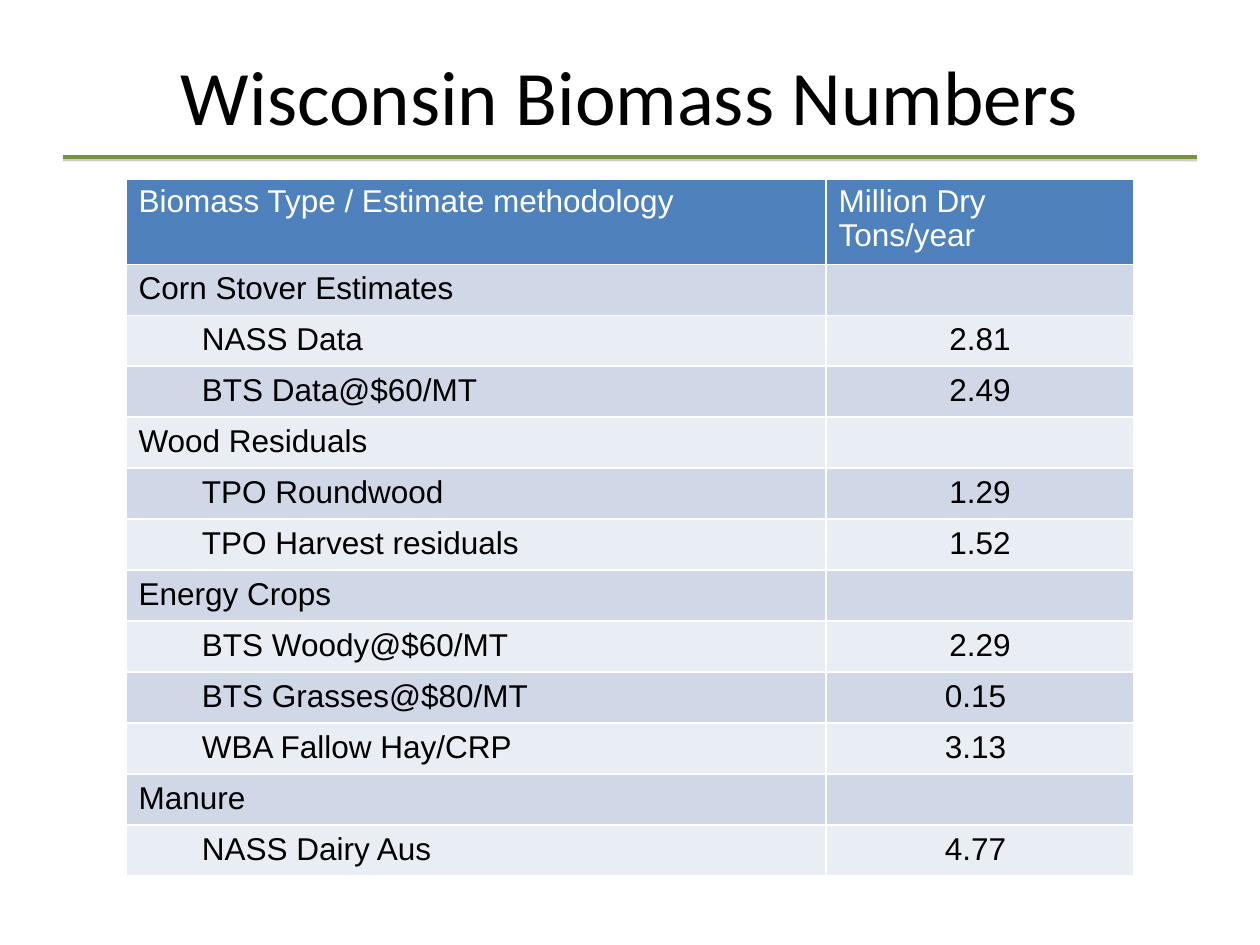
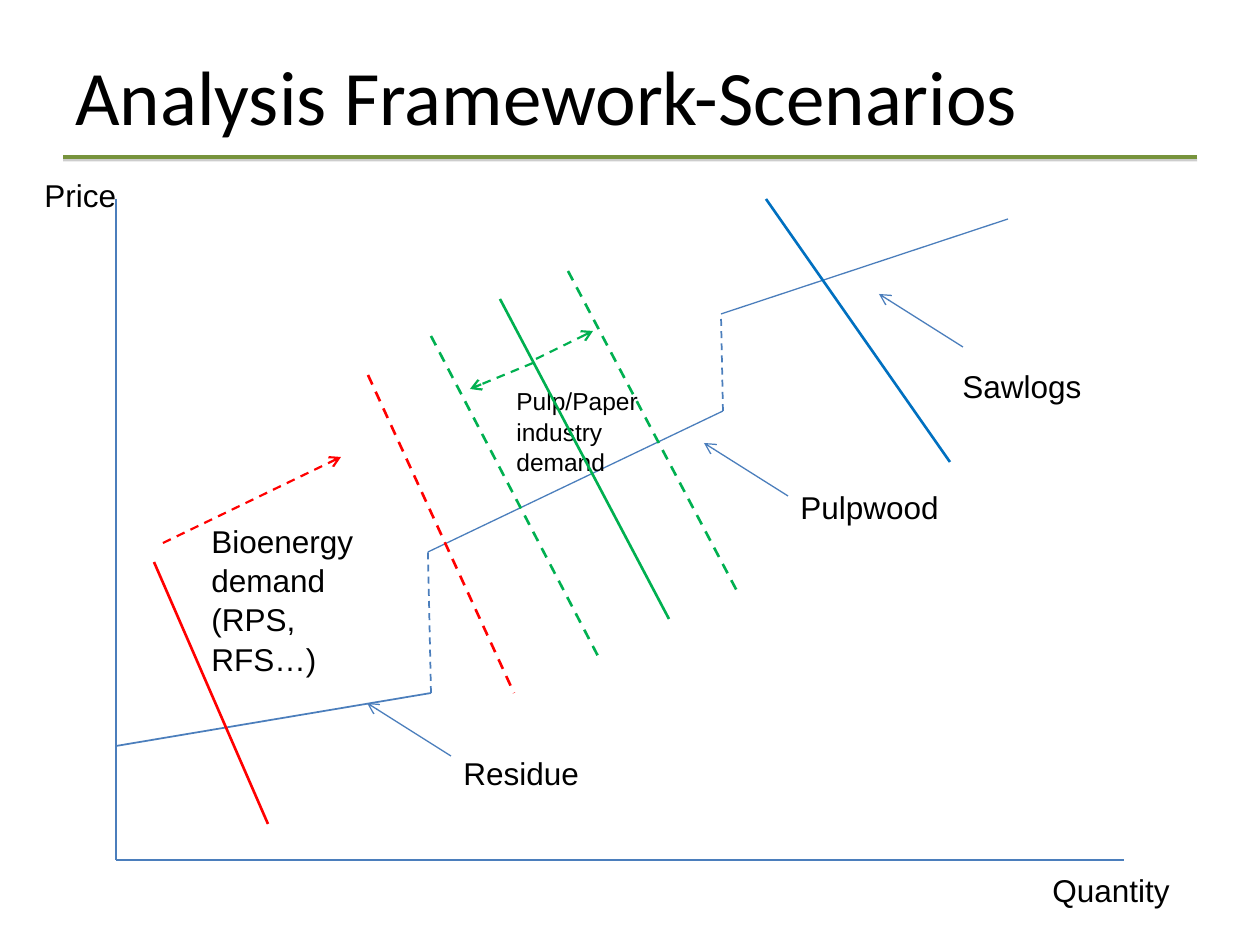
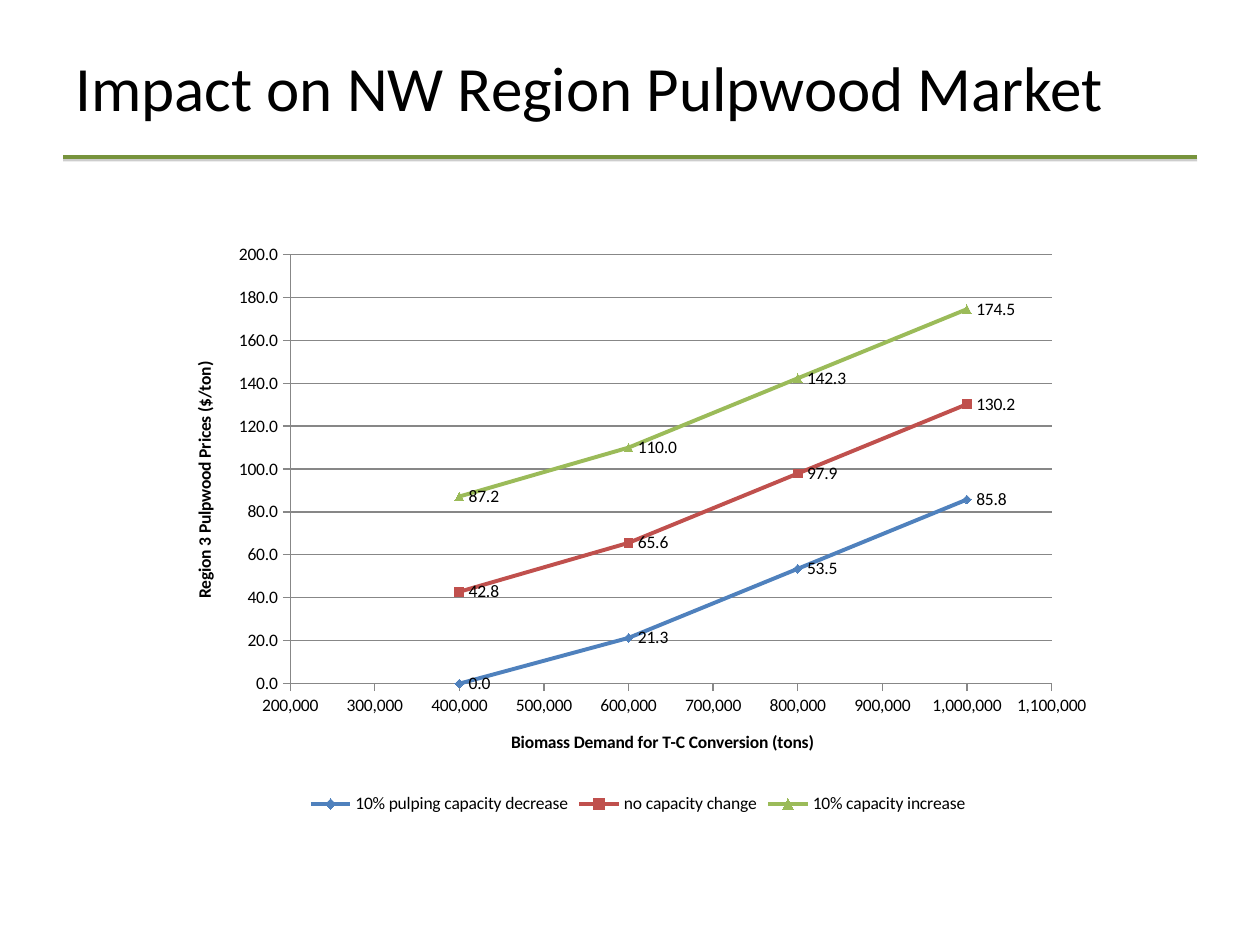
from itertools import pairwise

from pptx import Presentation
from pptx.chart.data import XyChartData
from pptx.chart.datalabel import DataLabels
from pptx.dml.color import RGBColor
from pptx.enum.chart import (XL_CHART_TYPE, XL_LABEL_POSITION, XL_LEGEND_POSITION,
                             XL_MARKER_STYLE, XL_TICK_MARK)
from pptx.enum.dml import MSO_LINE
from pptx.enum.shapes import MSO_CONNECTOR
from pptx.enum.text import MSO_ANCHOR, PP_ALIGN
from pptx.oxml import parse_xml
from pptx.oxml.ns import nsdecls, qn
from pptx.util import Pt

STRAIGHT = MSO_CONNECTOR.STRAIGHT
DASH = MSO_LINE.DASH
LEFT, CENTER = PP_ALIGN.LEFT, PP_ALIGN.CENTER
MARKERS = (XL_MARKER_STYLE.DIAMOND, XL_MARKER_STYLE.SQUARE, XL_MARKER_STYLE.TRIANGLE)

EMU_PER_PX = 914400 / 126
HEADING_FONT, BODY_FONT = "Calibri", "Arial"
BLACK, WHITE, GRAY = "000000", "FFFFFF", "878787"
RULE_GREEN, STEEL = "77933C", "4B7EBC"
RED, GREEN, BLUE = "FF0000", "00B050", "0070C0"
HEADER_FILL, BAND_FILLS = "4F81BD", ("D0D8E8", "E9EDF4")

BIOMASS_ROWS = [
    ("Corn Stover Estimates", ""),
    ("NASS Data", "2.81"),
    ("BTS Data@$60/MT", "2.49"),
    ("Wood Residuals", ""),
    ("TPO Roundwood", "1.29"),
    ("TPO Harvest residuals", "1.52"),
    ("Energy Crops", ""),
    ("BTS Woody@$60/MT", "2.29"),
    ("BTS Grasses@$80/MT", "0.15 "),
    ("WBA Fallow Hay/CRP", "3.13 "),
    ("Manure", ""),
    ("NASS Dairy Aus", "4.77 "),
]
DEMAND_LEVELS = (400000, 600000, 800000, 1000000)
PRICE_SERIES = [
    ("10% pulping capacity decrease", "4F81BD", (0, 21.3, 53.5, 85.8)),
    ("no capacity change", "C0504D", (42.8, 65.6, 97.9, 130.2)),
    ("10% capacity increase", "9BBB59", (87.2, 110.0, 142.3, 174.5)),
]


def px(n):
    return round(n * EMU_PER_PX)


def rgb(color):
    return RGBColor.from_string(color)


def style_font(font, size, color=BLACK, name=BODY_FONT, bold=False):
    font.name, font.size, font.bold = name, Pt(size), bold
    font.color.rgb = rgb(color)


def write(tf, text, size, color=BLACK, name=BODY_FONT, align=LEFT):
    p = tf.paragraphs[0]
    p.alignment = align
    r = p.add_run()
    r.text = text
    style_font(r.font, size, color, name)
    return p


def add_line(s, start, end, color, width, dash=False, arrow=False):
    c = s.shapes.add_connector(STRAIGHT, *map(px, (*start, *end)))
    c.line.color.rgb = rgb(color)
    c.line.width = Pt(width)
    if dash:
        c.line.dash_style = DASH
    if arrow:
        c.line._get_or_add_ln().append(
            parse_xml(f'<a:tailEnd {nsdecls("a")} type="arrow"/>'))
    effects = parse_xml(f'<a:effectLst {nsdecls("a")}/>')
    c._element.spPr.append(effects)
    return effects


def add_label(s, x, y, w, h, text, size=18):
    tf = s.shapes.add_textbox(*map(px, (x, y, w, h))).text_frame
    tf.word_wrap = True
    write(tf, text, size).line_spacing = 1.04


def add_titled_slide(prs, title, size=44, align=LEFT):
    """Add a blank slide with the title and the shadowed green rule."""
    s = prs.slides.add_slide(prs.slide_layouts[6])
    effects = add_line(s, (63, 157), (1197, 157), RULE_GREEN, 2)
    effects.append(parse_xml(
        f'<a:outerShdw {nsdecls("a")} blurRad="0" dist="{Pt(1.6)}" dir="5400000">'
        '<a:srgbClr val="808080"><a:alpha val="38000"/></a:srgbClr></a:outerShdw>'))
    tf = s.shapes.add_textbox(*map(px, (63, 38, 1134, 130))).text_frame
    tf.word_wrap = True
    tf.vertical_anchor = MSO_ANCHOR.TOP
    tf.margin_top = px(10)
    write(tf, title, size, name=HEADING_FONT, align=align)
    return s


def fill_cell(cell, text, fill, color=BLACK, align=LEFT):
    cell.fill.solid()
    cell.fill.fore_color.rgb = rgb(fill)
    return write(cell.text_frame, text, 18, color, align=align)


def add_biomass_table(s, x, y, w, row_h, header_h):
    count = len(BIOMASS_ROWS)
    frame = s.shapes.add_table(count + 1, 2, *map(px, (x, y, w, header_h + count * row_h)))
    table = frame.table
    type_w = 700
    for column, width in zip(table.columns, (type_w, w - type_w)):
        column.width = px(width)
    for i, row in enumerate(table.rows):
        row.height = px(row_h if i else header_h)
    for col, text in enumerate(("Biomass Type / Estimate methodology", "Million Dry Tons/year")):
        fill_cell(table.cell(0, col), text, HEADER_FILL, WHITE).line_spacing = 0.96
    for i, (kind, tons) in enumerate(BIOMASS_ROWS):
        fill = BAND_FILLS[i % 2]
        kind_cell = table.cell(i + 1, 0)
        fill_cell(kind_cell, kind, fill)
        if tons:
            kind_cell.margin_left = px(76)
        fill_cell(table.cell(i + 1, 1), tons, fill, align=CENTER)


def add_supply_diagram(s, x, y, w, h):
    """Draw price and quantity axes, the stepped supply curve and shifting demand lines."""
    def line(start, end, *style, **options):
        add_line(s, (x + start[0], y + start[1]), (x + end[0], y + end[1]), *style, **options)

    def label(left, top, *rest):
        add_label(s, x + left, y + top, *rest)

    line((0, 0), (0, h), STEEL, 0.75)
    line((0, h), (w, h), STEEL, 0.75)
    label(-84, -31, 105, 50, "Price")
    label(w - 84, h + 3, 158, 50, "Quantity")

    steps = [(0, 547), (315, 494), (312, 353), (607, 212), (605, 115), (892, 20)]
    for i, ((start, end), width) in enumerate(zip(pairwise(steps), (1, 1, 0.75, 1, 0.75))):
        line(start, end, STEEL, width, dash=i % 2 == 1)

    callouts = [("Residue", (335, 557), (335, 547)),
                ("Pulpwood", (672, 297), (672, 281)),
                ("Sawlogs", (847, 148), (834, 160))]
    for text, (left, top), corner in callouts:
        line((left, top), (left - 84, top - 53), STEEL, 0.75, arrow=True)
        label(*corner, 168, 50, text)

    label(83, 315, 168, 165, "Bioenergy demand (RPS, RFS…)")
    label(388, 180, 147, 102, "Pulp/Paper industry demand", 14)

    demand_lines = [((650, 0), (834, 263), BLUE, False),
                    ((384, 100), (553, 420), GREEN, False),
                    ((452, 72), (621, 392), GREEN, True),
                    ((315, 137), (482, 457), GREEN, True),
                    ((38, 363), (152, 625), RED, False),
                    ((252, 176), (398, 494), RED, True)]
    for start, end, color, dash in demand_lines:
        line(start, end, color, 1.5, dash=dash)
    shifts = [((47, 344), (225, 258), RED),
              ((420, 160), (477, 132), GREEN),
              ((417, 164), (354, 190), GREEN)]
    for start, end, color in shifts:
        line(start, end, color, 1.25, dash=True, arrow=True)


def style_axis(axis, title, low, high, step, number_format):
    axis.minimum_scale, axis.maximum_scale, axis.major_unit = low, high, step
    axis.major_tick_mark = XL_TICK_MARK.OUTSIDE
    axis.format.line.color.rgb = rgb(GRAY)
    axis.tick_labels.number_format = number_format
    axis.tick_labels.number_format_is_linked = False
    r = axis.axis_title.text_frame.paragraphs[0].add_run()
    r.text = title
    style_font(r.font, 10, name=HEADING_FONT, bold=True)


def place_plot(chart, x, y, w, h):
    """Fix the inner plot area, in fractions of the chart frame."""
    area = chart._chartSpace.chart.plotArea
    for old in area.findall(qn("c:layout")):
        area.remove(old)
    sizes = "".join(f'<c:{tag} val="{value}"/>' for tag, value in zip("xywh", (x, y, w, h)))
    area.insert(0, parse_xml(
        f'<c:layout {nsdecls("c")}><c:manualLayout><c:layoutTarget val="inner"/>'
        f'<c:xMode val="edge"/><c:yMode val="edge"/>{sizes}</c:manualLayout></c:layout>'))


def add_price_chart(s, x, y, w, h):
    data = XyChartData(number_format="0.0")
    for name, _, prices in PRICE_SERIES:
        series = data.add_series(name)
        for demand, price in zip(DEMAND_LEVELS, prices):
            series.add_data_point(demand, price)
    frame = s.shapes.add_chart(XL_CHART_TYPE.XY_SCATTER_LINES, *map(px, (x, y, w, h)), data)
    chart = frame.chart
    style_font(chart.font, 10, name=HEADING_FONT)
    chart.has_title = False
    chart.has_legend = True
    chart.legend.position = XL_LEGEND_POSITION.BOTTOM
    chart.legend.include_in_layout = False
    place_plot(chart, 0.13, 0.04, 0.81, 0.73)

    demand_axis, price_axis = chart.category_axis, chart.value_axis
    style_axis(demand_axis, "Biomass Demand for T-C Conversion (tons)",
               200000, 1100000, 100000, "#,##0")
    style_axis(price_axis, "Region 3 Pulpwood Prices ($/ton)", 0, 200, 20, "0.0")
    demand_axis.has_major_gridlines = False
    price_axis.has_major_gridlines = True
    price_axis.major_gridlines.format.line.color.rgb = rgb(GRAY)

    plot = chart.plots[0]
    plot.vary_by_categories = False
    for series, (_, color, _), marker in zip(plot.series, PRICE_SERIES, MARKERS):
        series.smooth = False
        series.format.line.color.rgb = rgb(color)
        series.format.line.width = Pt(2.25)
        series.marker.style = marker
        series.marker.size = 5
        series.marker.format.fill.solid()
        series.marker.format.fill.fore_color.rgb = rgb(color)
        series.marker.format.line.color.rgb = rgb(color)
        labels = DataLabels(series._element.get_or_add_dLbls())
        labels.show_value = True
        labels.number_format = "0.0"
        labels.number_format_is_linked = False
        labels.position = XL_LABEL_POSITION.RIGHT
        style_font(labels.font, 10, name=HEADING_FONT)


def main():
    prs = Presentation()
    prs.slide_width, prs.slide_height = px(1260), px(945)
    s = add_titled_slide(prs, "Wisconsin Biomass Numbers", align=CENTER)
    add_biomass_table(s, 126, 179, 1008, 51, 82)
    s = add_titled_slide(prs, "Analysis Framework-Scenarios")
    add_supply_diagram(s, 116, 199, 1008, 661)
    s = add_titled_slide(prs, "Impact on NW Region Pulpwood Market", 36)
    add_price_chart(s, 168, 231, 940, 588)
    prs.save("out.pptx")


if __name__ == "__main__":
    main()
